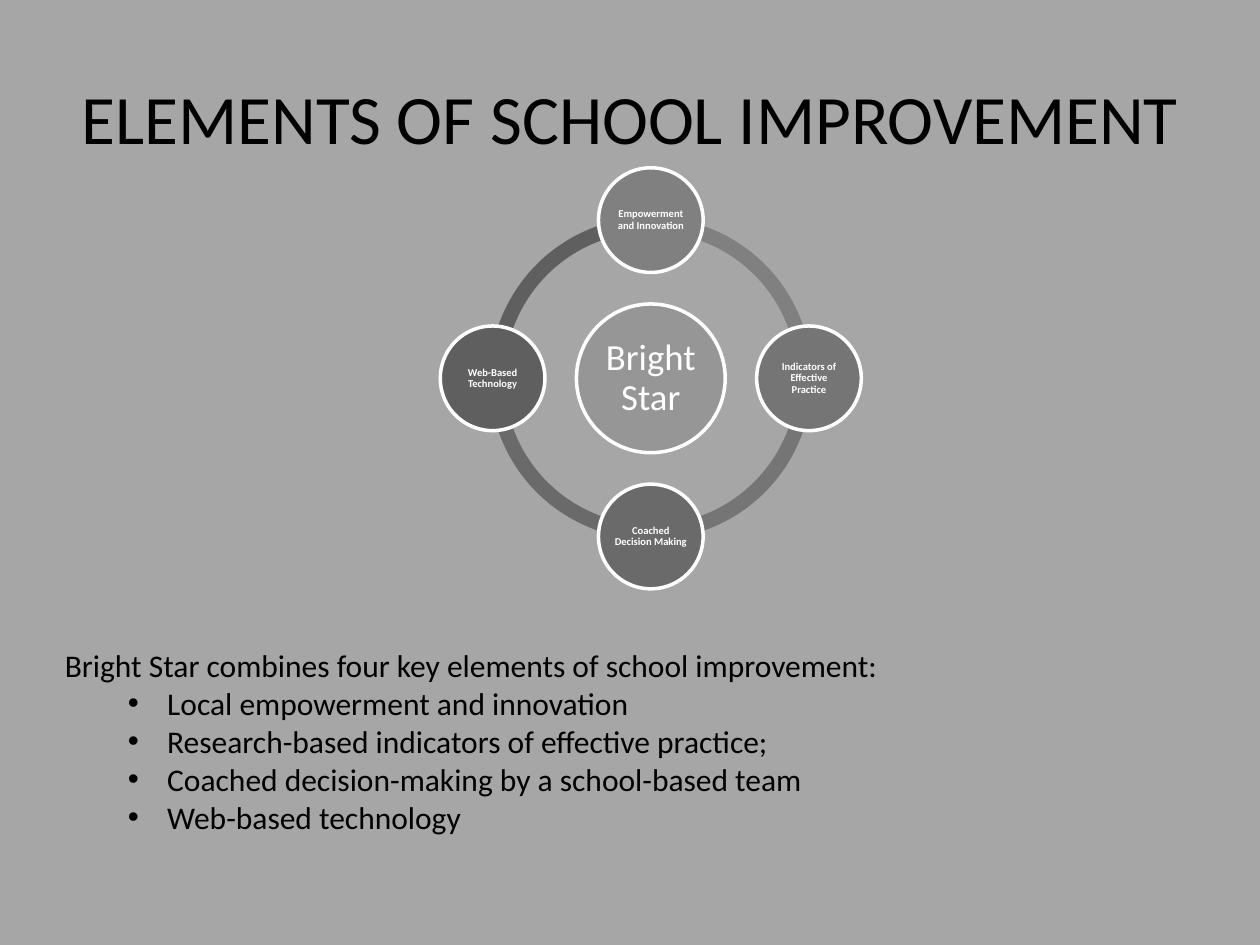
import math

import pptx
import pptx.dml.color
import pptx.enum.shapes
import pptx.enum.text
import pptx.oxml.ns
import pptx.util
from lxml import etree

Pt = pptx.util.Pt
Shape = pptx.enum.shapes.MSO_SHAPE
Align = pptx.enum.text.PP_ALIGN
Anchor = pptx.enum.text.MSO_ANCHOR

COLORS = {
    "background": "A6A6A6",
    "text": "000000",
    "light": "FFFFFF",
    "hub": "969696",
    "empowerment": "808080",
    "indicators": "757575",
    "coaching": "6A6A6A",
    "technology": "5F5F5F",
}

CENTER_X, CENTER_Y = 371.9, 216.2
ORBIT = 90.4
ARC_SIZE = 184.3
ARC_THICKNESS = 0.046
HUB_SIZE, NODE_SIZE = 85, 59.8

# Clockwise from the top
NODES = [
    ("Empowerment and Innovation", "empowerment"),
    ("Indicators of Effective Practice", "indicators"),
    ("Coached Decision Making", "coaching"),
    ("Web-Based Technology", "technology"),
]

ELEMENTS = [
    "Local empowerment and innovation",
    "Research-based indicators of effective practice;",
    "Coached decision-making by a school-based team",
    "Web-based technology",
]


def rgb(name):
    return pptx.dml.color.RGBColor.from_string(COLORS[name])


class Deck:
    """Holds the text style and the slide being drawn."""

    font = "Calibri"

    def __init__(self, prs):
        self.s = prs.slides.add_slide(prs.slide_layouts[6])
        fill = self.s.background.fill
        fill.solid()
        fill.fore_color.rgb = rgb("background")

    def run(self, p, text, size, color="text", bold=False):
        r = p.add_run()
        r.text = text
        r.font.name = self.font
        r.font.size = Pt(size)
        r.font.bold = bold
        r.font.color.rgb = rgb(color)

    def bullet(self, p, indent, hanging):
        pPr = p._p.get_or_add_pPr()
        pPr.set("marL", str(Pt(indent)))
        pPr.set("indent", str(-Pt(hanging)))
        for tag, key, value in (("a:buFont", "typeface", "Arial"), ("a:buChar", "char", "•")):
            etree.SubElement(pPr, pptx.oxml.ns.qn(tag)).set(key, value)

    def text_box(self, left, top, width, height, anchor=Anchor.TOP):
        sp = self.s.shapes.add_textbox(Pt(left), Pt(top), Pt(width), Pt(height))
        tf = sp.text_frame
        tf.word_wrap = True
        tf.vertical_anchor = anchor
        return tf

    def centered_shape(self, kind, x, y, size, color):
        """Add a square-sized shape whose middle is at x, y."""
        sp = self.s.shapes.add_shape(
            kind, Pt(x - size / 2), Pt(y - size / 2), Pt(size), Pt(size))
        sp.shadow.inherit = False
        sp.fill.solid()
        sp.fill.fore_color.rgb = rgb(color)
        sp.line.fill.background()
        return sp

    def arc(self, start, end, color):
        """Add a ring segment running clockwise between two angles in degrees."""
        sp = self.centered_shape(Shape.BLOCK_ARC, CENTER_X, CENTER_Y, ARC_SIZE, color)
        # Angles are stored in 60000ths of a degree, adjustments in 100000ths
        for i, value in enumerate((start * 0.6, end * 0.6, ARC_THICKNESS)):
            sp.adjustments[i] = value

    def circle(self, x, y, size, color, text, text_size, inset, bold=False):
        sp = self.centered_shape(Shape.OVAL, x, y, size, color)
        sp.line.color.rgb = rgb("light")
        sp.line.width = Pt(2)
        tf = sp.text_frame
        tf.word_wrap = True
        tf.vertical_anchor = Anchor.MIDDLE
        tf.margin_left = tf.margin_right = tf.margin_top = tf.margin_bottom = Pt(inset)
        p = tf.paragraphs[0]
        p.alignment = Align.CENTER
        p.line_spacing = 0.9
        self.run(p, text, text_size, "light", bold)


def main():
    prs = pptx.Presentation()
    prs.slide_width, prs.slide_height = Pt(720), Pt(540)
    deck = Deck(prs)

    p = deck.text_box(36, 21.6, 648, 90, Anchor.MIDDLE).paragraphs[0]
    p.alignment = Align.CENTER
    deck.run(p, "ELEMENTS OF SCHOOL IMPROVEMENT", 39.6)

    angles = [(270 + 90 * i) % 360 for i in range(len(NODES))]
    for angle, (_, color) in reversed(list(zip(angles, NODES))):
        deck.arc(angle, (angle + 90) % 360, color)

    deck.circle(CENTER_X, CENTER_Y, HUB_SIZE, "hub", "Bright Star", 21, 2)
    for angle, (text, color) in zip(angles, NODES):
        x = CENTER_X + ORBIT * math.cos(math.radians(angle))
        y = CENTER_Y + ORBIT * math.sin(math.radians(angle))
        deck.circle(x, y, NODE_SIZE, color, text, 6, 0.6, bold=True)

    tf = deck.text_box(30, 365.8, 642, 138)
    deck.run(tf.paragraphs[0],
             "Bright Star combines four key elements of school improvement:", 18)
    for element in ELEMENTS:
        p = tf.add_paragraph()
        p.level = 1
        deck.bullet(p, 58.5, 22.5)
        deck.run(p, element, 18)

    prs.save("out.pptx")


if __name__ == "__main__":
    main()
